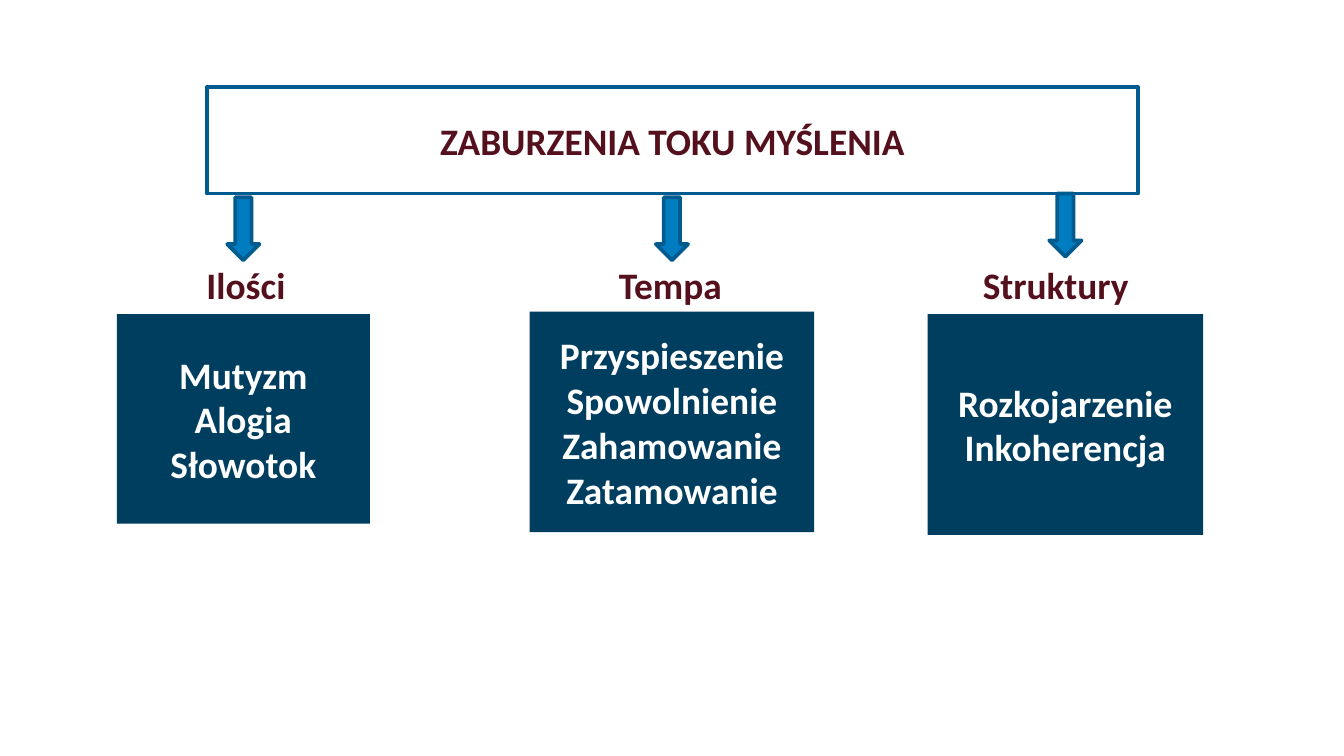
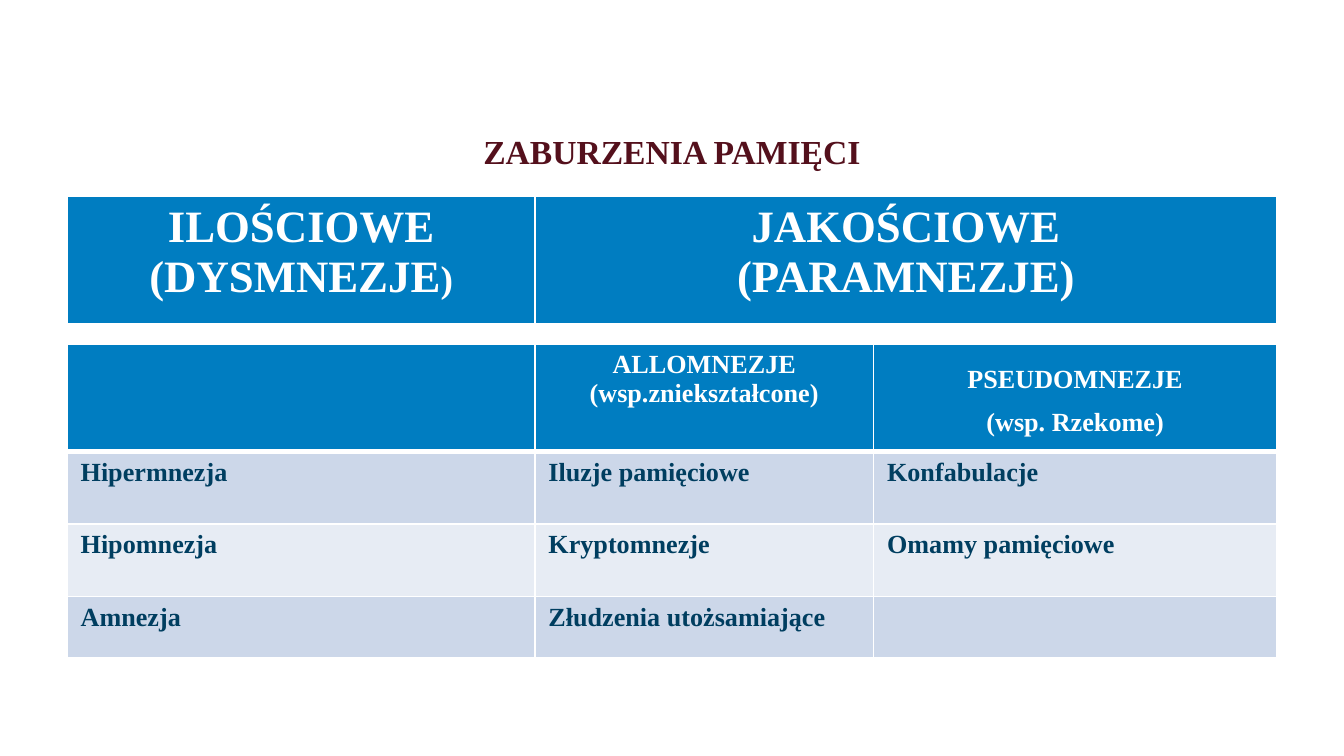
from lxml.etree import SubElement
from pptx import Presentation
from pptx.dml.color import RGBColor
from pptx.enum.shapes import MSO_SHAPE as Shape
from pptx.enum.text import MSO_ANCHOR as Anchor, PP_ALIGN as Align
from pptx.oxml.ns import qn
from pptx.util import Cm, Pt

MAROON, WHITE = "54101C", "FFFFFF"
NAVY, BLUE, OUTLINE = "003E60", "007DC1", "005C8F"
BANDS = ("CCD7E9", "E7ECF4")
SANS, SERIF = "Calibri", "Times New Roman"
TITLE_BOX = (1.27, 1.96, 22.86, 1.4)
TABLE_LEFT = 1.27


def color(hex_code):
    return RGBColor.from_string(hex_code)


def write(frame, paragraphs, *, font=SANS, size=20, ink=WHITE,
          align=Align.CENTER, spacing=None):
    """Each paragraph is a string or a list of (text, size) runs."""
    for index, content in enumerate(paragraphs):
        paragraph = frame.add_paragraph() if index else frame.paragraphs[0]
        paragraph.alignment = align
        if spacing:
            paragraph.line_spacing = spacing
        runs = [(content, size)] if isinstance(content, str) else content
        for text, run_size in runs:
            run = paragraph.add_run()
            run.text = text
            run.font.name = font
            run.font.size = Pt(run_size)
            run.font.bold = True
            run.font.color.rgb = color(ink)


def add_label(slide, box, text, **style):
    frame = slide.shapes.add_textbox(*map(Cm, box)).text_frame
    frame.word_wrap = True
    frame.vertical_anchor = Anchor.MIDDLE
    write(frame, [text], ink=MAROON, **style)


def add_block(slide, kind, box, fill=None, line=None):
    block = slide.shapes.add_shape(kind, *map(Cm, box))
    block.shadow.inherit = False
    if fill:
        block.fill.solid()
        block.fill.fore_color.rgb = color(fill)
    else:
        block.fill.background()
    if line:
        block.line.color.rgb = color(line)
        block.line.width = Pt(2)
    else:
        block.line.fill.background()
    block.text_frame.vertical_anchor = Anchor.MIDDLE
    return block


def add_branch(slide, box, arrow_top, label, label_shift, disorders):
    """Arrow and label centred above a box that lists the disorders."""
    left, _, width, _ = box
    center = left + width / 2
    arrow_width, label_width = 0.61, 5
    add_block(slide, Shape.DOWN_ARROW,
              (center - arrow_width / 2, arrow_top, arrow_width, 1.19),
              BLUE, OUTLINE)
    add_label(slide, (center + label_shift - label_width / 2, 4.88, label_width, 1),
              label)
    write(add_block(slide, Shape.RECTANGLE, box, NAVY).text_frame, disorders)


def set_borders(cell, bottom=1):
    properties = cell._tc.get_or_add_tcPr()
    widths = {"a:lnL": 1, "a:lnR": 1, "a:lnT": 1, "a:lnB": bottom}
    for position, (tag, width) in enumerate(widths.items()):
        border = SubElement(properties, qn(tag), w=str(Pt(width)))
        fill = SubElement(border, qn("a:solidFill"))
        SubElement(fill, qn("a:srgbClr"), val=WHITE)
        properties.insert(position, border)


def add_grid(slide, top, columns, heights):
    shape = slide.shapes.add_table(len(heights), len(columns), Cm(TABLE_LEFT), Cm(top),
                                   Cm(sum(columns)), Cm(sum(heights)))
    grid = shape.table
    grid.horz_banding = False
    for column, width in zip(grid.columns, columns):
        column.width = Cm(width)
    for row, height in zip(grid.rows, heights):
        row.height = Cm(height)
    return grid


def fill_cell(cell, paragraphs, fill, bottom=1, **style):
    cell.fill.solid()
    cell.fill.fore_color.rgb = color(fill)
    set_borders(cell, bottom)
    write(cell.text_frame, paragraphs, font=SERIF, **style)


def build_thinking(slide):
    heading = add_block(slide, Shape.FLOWCHART_PROCESS, (3.91, 1.65, 17.6, 2.01),
                        line=OUTLINE)
    write(heading.text_frame, ["ZABURZENIA TOKU MYŚLENIA"], ink=MAROON)
    add_branch(slide, (2.21, 5.94, 4.78, 3.96), 3.73, "Ilości", 0.05,
               ["Mutyzm", "Alogia", "Słowotok"])
    add_branch(slide, (10.01, 5.89, 5.38, 4.17), 3.73, "Tempa", -0.03,
               ["Przyspieszenie", "Spowolnienie", "Zahamowanie", "Zatamowanie"])
    add_branch(slide, (17.53, 5.94, 5.21, 4.17), 3.66, "Struktury", -0.18,
               ["Rozkojarzenie", "Inkoherencja"])


def build_memory(slide):
    add_label(slide, TITLE_BOX, "ZABURZENIA PAMIĘCI", font=SERIF, size=18, spacing=1.5)

    groups = add_grid(slide, 3.71, (8.84, 14.02), (2.44,))
    names = ([[("ILOŚCIOWE (DYSMNEZJE", 24), (")", 20)]],
             ["JAKOŚCIOWE", "(PARAMNEZJE)"])
    for column, name in enumerate(names):
        fill_cell(groups.cell(0, column), name, BLUE, bottom=3, size=24)

    details = add_grid(slide, 6.5, (8.84, 6.4, 7.62), (1.65, 1.37, 1.37, 1.17))
    headers = (([], None),
               (["ALLOMNEZJE (wsp.zniekształcone)"], None),
               (["PSEUDOMNEZJE", "(wsp. Rzekome)"], 1.5))
    for column, (header, spacing) in enumerate(headers):
        fill_cell(details.cell(0, column), header, BLUE, bottom=3, size=14,
                  spacing=spacing)
    disorders = (("Hipermnezja", "Iluzje pamięciowe", "Konfabulacje"),
                 ("Hipomnezja", "Kryptomnezje", "Omamy pamięciowe"),
                 ("Amnezja", "Złudzenia utożsamiające", ""))
    for row, names in enumerate(disorders):
        for column, name in enumerate(names):
            fill_cell(details.cell(row + 1, column), [name] if name else [],
                      BANDS[row % 2], size=14, ink=NAVY, align=Align.LEFT)


def main():
    deck = Presentation()
    deck.slide_width, deck.slide_height = Cm(25.4), Cm(14.29)
    for build in (build_thinking, build_memory):
        build(deck.slides.add_slide(deck.slide_layouts[6]))
    deck.save("out.pptx")


if __name__ == "__main__":
    main()
